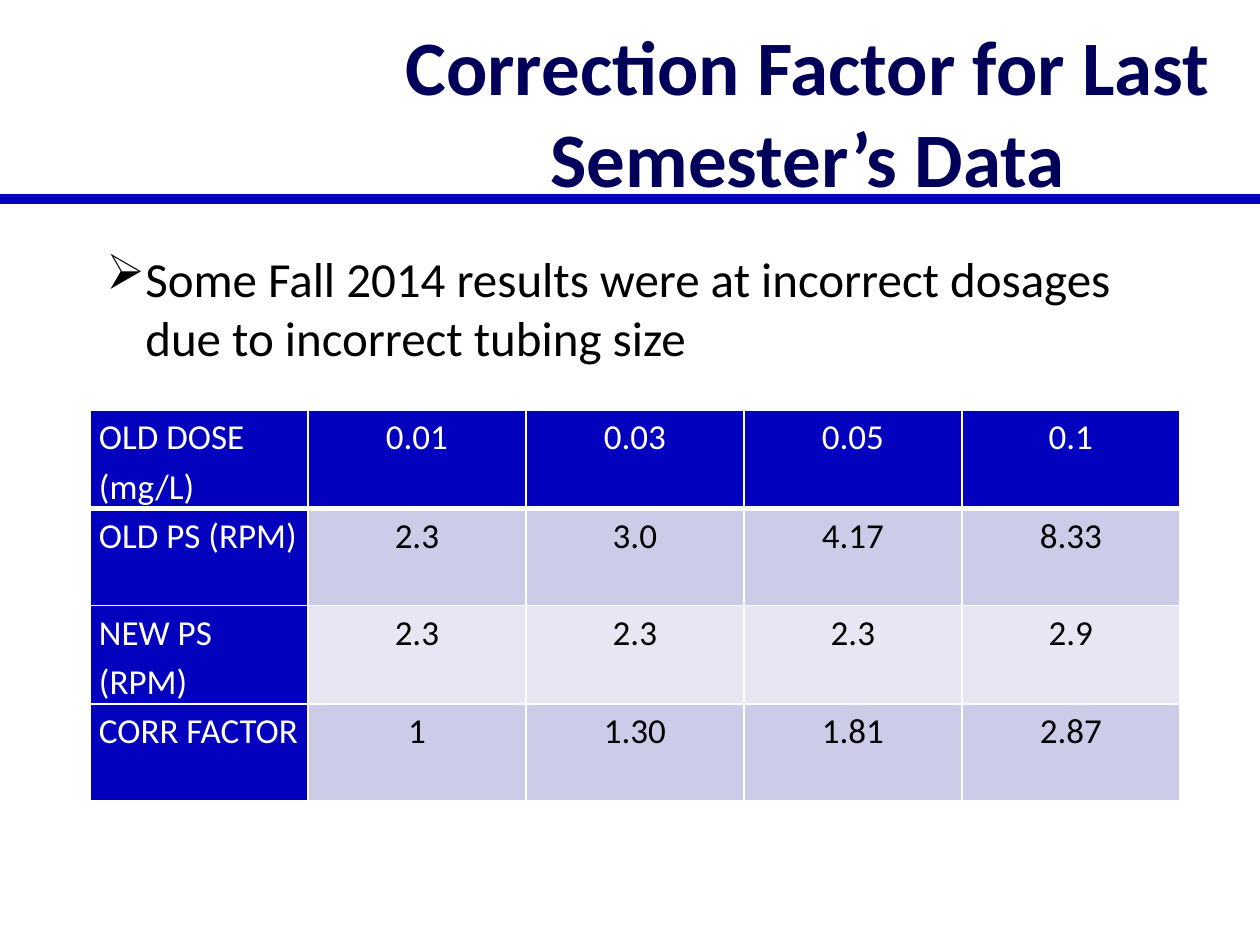
from dataclasses import dataclass

from lxml import etree
from pptx import Presentation
from pptx.dml.color import RGBColor
from pptx.enum.shapes import MSO_CONNECTOR
from pptx.enum.text import MSO_ANCHOR, MSO_AUTO_SIZE, PP_ALIGN
from pptx.oxml.ns import qn
from pptx.util import Emu, Pt

STRAIGHT = MSO_CONNECTOR.STRAIGHT
MIDDLE, TOP = MSO_ANCHOR.MIDDLE, MSO_ANCHOR.TOP
LEFT, CENTER = PP_ALIGN.LEFT, PP_ALIGN.CENTER
FIT_SHAPE, NO_FIT = MSO_AUTO_SIZE.SHAPE_TO_FIT_TEXT, MSO_AUTO_SIZE.NONE

PX_PER_INCH = 126
PAGE_WIDTH, PAGE_HEIGHT = 1260, 945
FONT = "Calibri"
COLORS = {
    "navy": "00005A",
    "blue": "0300BE",
    "dark_band": "CCCCE8",
    "light_band": "E7E7F4",
    "white": "FFFFFF",
    "black": "000000",
}


@dataclass(frozen=True)
class Box:
    left: int
    top: int
    width: int
    height: int


@dataclass(frozen=True)
class DataRow:
    label: str
    values: tuple[str, ...]
    fill: str
    ink: str
    bottom_border: int = 1


TITLE_BOX = Box(388, 32, 840, 158)
BODY_BOX = Box(94, 242, 1082, 131)
TABLE_BOX = Box(90, 410, 1090, 388)
RULE_Y = 199
ROWS = (
    DataRow("OLD DOSE (mg/L)", ("0.01", "0.03", "0.05", "0.1"), "blue", "white", 3),
    DataRow("OLD PS (RPM)", ("2.3", "3.0", "4.17", "8.33"), "dark_band", "black"),
    DataRow("NEW PS (RPM)", ("2.3", "2.3", "2.3", "2.9"), "light_band", "black"),
    DataRow("CORR FACTOR", ("1", "1.30", "1.81", "2.87"), "dark_band", "black"),
)


def px(length: int) -> Emu:
    return Emu(round(length * 914400 / PX_PER_INCH))


def frame(box: Box) -> tuple[Emu, ...]:
    return px(box.left), px(box.top), px(box.width), px(box.height)


def color(name: str) -> RGBColor:
    return RGBColor.from_string(COLORS[name])


def style(para, size: int, ink: str, bold: bool = False) -> None:
    para.font.name = FONT
    para.font.size = Pt(size)
    para.font.bold = bold
    para.font.color.rgb = color(ink)


def add_title(page) -> None:
    title = page.shapes.title
    title.left, title.top, title.width, title.height = frame(TITLE_BOX)
    text = title.text_frame
    text.text = "Correction Factor for Last Semester’s Data"
    text.word_wrap = True
    text.auto_size = NO_FIT
    text.vertical_anchor = MIDDLE
    para = text.paragraphs[0]
    para.alignment = CENTER
    style(para, 44, "navy", bold=True)


def add_rule(page) -> None:
    rule = page.shapes.add_connector(
        STRAIGHT, px(0), px(RULE_Y), px(PAGE_WIDTH), px(RULE_Y)
    )
    rule.line.color.rgb = color("blue")
    rule.line.width = Pt(6)
    etree.SubElement(rule.element.spPr, qn("a:effectLst"))
    page.shapes.title.element.addprevious(rule.element)


def add_body(page) -> None:
    text = page.shapes.add_textbox(*frame(BODY_BOX)).text_frame
    text.word_wrap = True
    text.auto_size = FIT_SHAPE
    para = text.paragraphs[0]
    para.text = (
        "Some Fall 2014 results were at incorrect dosages due to incorrect tubing size"
    )
    properties = para._p.get_or_add_pPr()
    properties.set("marL", str(px(39)))
    properties.set("indent", str(-px(39)))
    etree.SubElement(properties, qn("a:buChar"), char="➢")
    style(para, 28, "black")


def set_borders(cell, bottom: int) -> None:
    properties = cell._tc.get_or_add_tcPr()
    widths = {"a:lnL": 1, "a:lnR": 1, "a:lnT": 1, "a:lnB": bottom}
    for position, (tag, width) in enumerate(widths.items()):
        line = etree.Element(qn(tag), w=str(Pt(width)))
        fill = etree.SubElement(line, qn("a:solidFill"))
        etree.SubElement(fill, qn("a:srgbClr"), val=COLORS["white"])
        properties.insert(position, line)


def fill_cell(cell, text: str, fill: str, ink: str, align, bottom: int) -> None:
    cell.fill.solid()
    cell.fill.fore_color.rgb = color(fill)
    cell.margin_left = cell.margin_right = px(9)
    cell.margin_top = cell.margin_bottom = 0
    cell.vertical_anchor = TOP
    set_borders(cell, bottom)
    para = cell.text_frame.paragraphs[0]
    para.text = text
    para.alignment = align
    para.line_spacing = 1.15
    style(para, 20, ink)


def add_dose_table(page) -> None:
    column_count = len(ROWS[0].values) + 1
    table = page.shapes.add_table(len(ROWS), column_count, *frame(TABLE_BOX)).table
    table.first_row = table.horz_banding = False
    for row_index, row in enumerate(ROWS):
        bottom = row.bottom_border
        fill_cell(table.cell(row_index, 0), row.label, "blue", "white", LEFT, bottom)
        for column_index, value in enumerate(row.values, start=1):
            cell = table.cell(row_index, column_index)
            fill_cell(cell, value, row.fill, row.ink, CENTER, bottom)


def main() -> None:
    deck = Presentation()
    deck.slide_width, deck.slide_height = px(PAGE_WIDTH), px(PAGE_HEIGHT)
    page = deck.slides.add_slide(deck.slide_layouts.get_by_name("Title Only"))
    add_title(page)
    add_rule(page)
    add_dose_table(page)
    add_body(page)
    deck.save("out.pptx")


if __name__ == "__main__":
    main()
